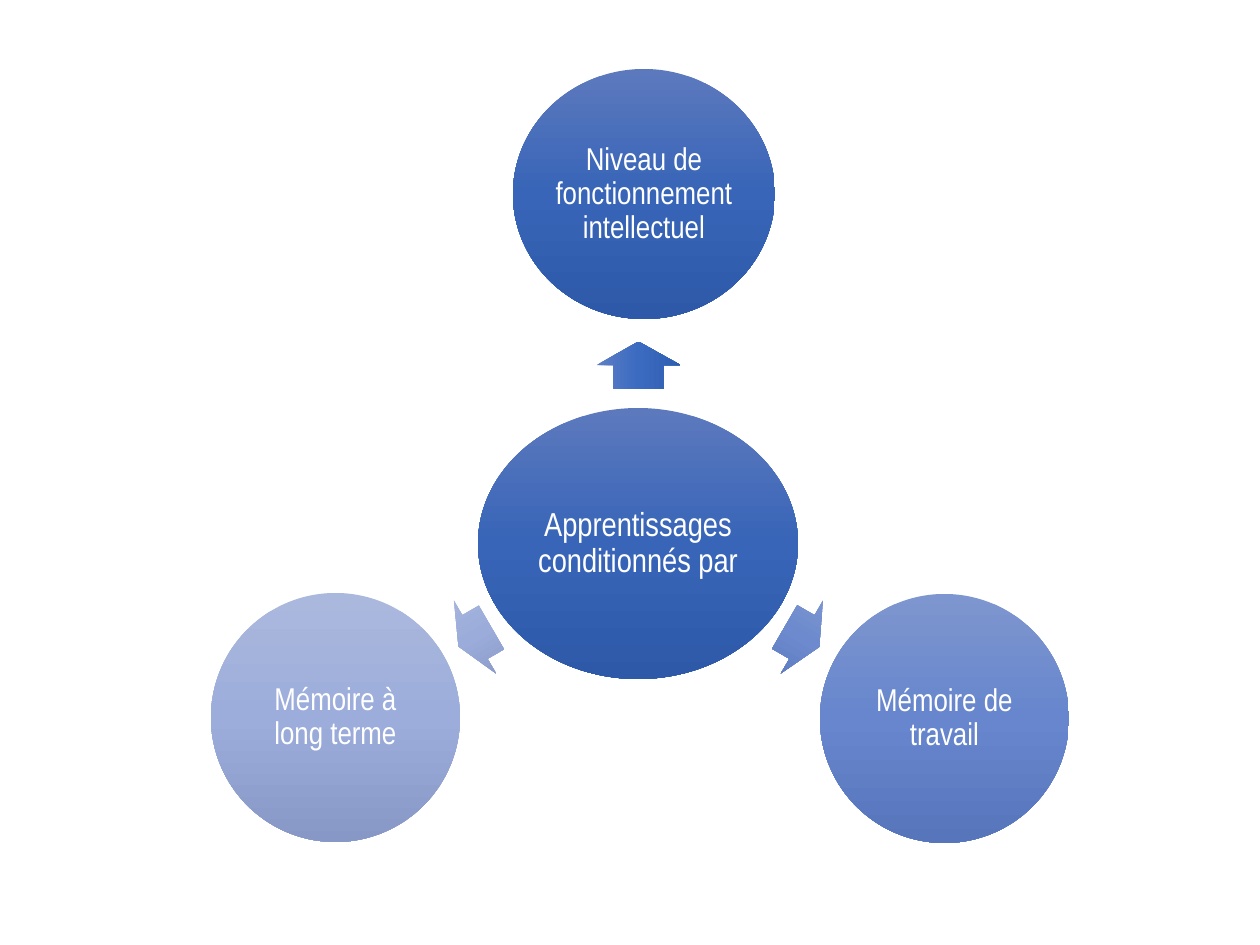
from copy import deepcopy

from pptx import Presentation
from pptx.dml.color import RGBColor
from pptx.enum.shapes import MSO_SHAPE
from pptx.enum.text import MSO_ANCHOR, PP_ALIGN
from pptx.util import Pt

PX = 914400 / 126
THEME = {
    "font": "Arial Narrow",
    "text": "FFFFFF",
    "centre_size": 19,
    "outer_size": 18,
    "dark": ("5C79BD", "3865B8", "2D59A8"),
    "medium": ("7E96CF", "6786CD", "5775BB"),
    "light": ("ABB8DD", "9CADDB", "8798C6"),
    "dark_arrow": ("5E7EC4", "3B6BC1", "2F5EB1"),
    "medium_arrow": ("8299D0", "6C8ACD", "5A79BC"),
    "light_arrow": ("AAB7DD", "9BACDB", "8697C6"),
}


def add_gradient_shape(kind, box, colours):
    """Add a borderless shape shaded from top to bottom in three colours."""
    shape = page.shapes.add_shape(kind, *(round(length * PX) for length in box))
    shape.shadow.inherit = False
    shape.line.fill.background()
    shape.fill.gradient()
    shape.fill.gradient_angle = 270
    stop_list = shape.fill.gradient_stops[0]._gs.getparent()
    stop_list.append(deepcopy(stop_list[-1]))
    for stop, position, colour in zip(shape.fill.gradient_stops, (0, 0.5, 1), colours):
        stop.position = position
        stop.color.rgb = RGBColor.from_string(colour)
    return shape


def write_text(shape, text, *, size, margin=2):
    frame = shape.text_frame
    frame.word_wrap = True
    frame.vertical_anchor = MSO_ANCHOR.MIDDLE
    frame.margin_left = frame.margin_right = round(margin * PX)
    frame.margin_top = frame.margin_bottom = round(margin * PX)
    para = frame.paragraphs[0]
    para.alignment = PP_ALIGN.CENTER
    para.line_spacing = 0.9
    span = para.add_run()
    span.text = text
    span.font.name = THEME["font"]
    span.font.size = Pt(size)
    span.font.color.rgb = RGBColor.from_string(THEME["text"])


deck = Presentation()
deck.slide_width = round(1260 * PX)
deck.slide_height = round(945 * PX)
page = deck.slides.add_slide(deck.slide_layouts[6])

centre = add_gradient_shape(MSO_SHAPE.OVAL, (478, 408, 320, 271), THEME["dark"])
write_text(centre, "Apprentissages conditionnés par", size=THEME["centre_size"])

# Each factor: text, shade, circle box, arrow kind, arrow box, arrow rotation
factors = [
    ("Niveau de fonctionnement intellectuel", "dark", (513, 69, 262, 250),
     MSO_SHAPE.RIGHT_ARROW, (615, 323, 47, 84), 270),
    ("Mémoire de travail", "medium", (820, 594, 249, 249),
     MSO_SHAPE.RIGHT_ARROW, (782, 595, 40, 84), 30),
    ("Mémoire à long terme", "light", (211, 593, 249, 249),
     MSO_SHAPE.LEFT_ARROW, (456, 595, 38, 84), 330),
]
for text, shade, circle_box, arrow_kind, arrow_box, rotation in factors:
    arrow = add_gradient_shape(arrow_kind, arrow_box, THEME[shade + "_arrow"])
    arrow.adjustments[0] = 0.6
    arrow.adjustments[1] = 0.5
    arrow.rotation = rotation
    circle = add_gradient_shape(MSO_SHAPE.OVAL, circle_box, THEME[shade])
    write_text(circle, text, size=THEME["outer_size"])

deck.save("out.pptx")
